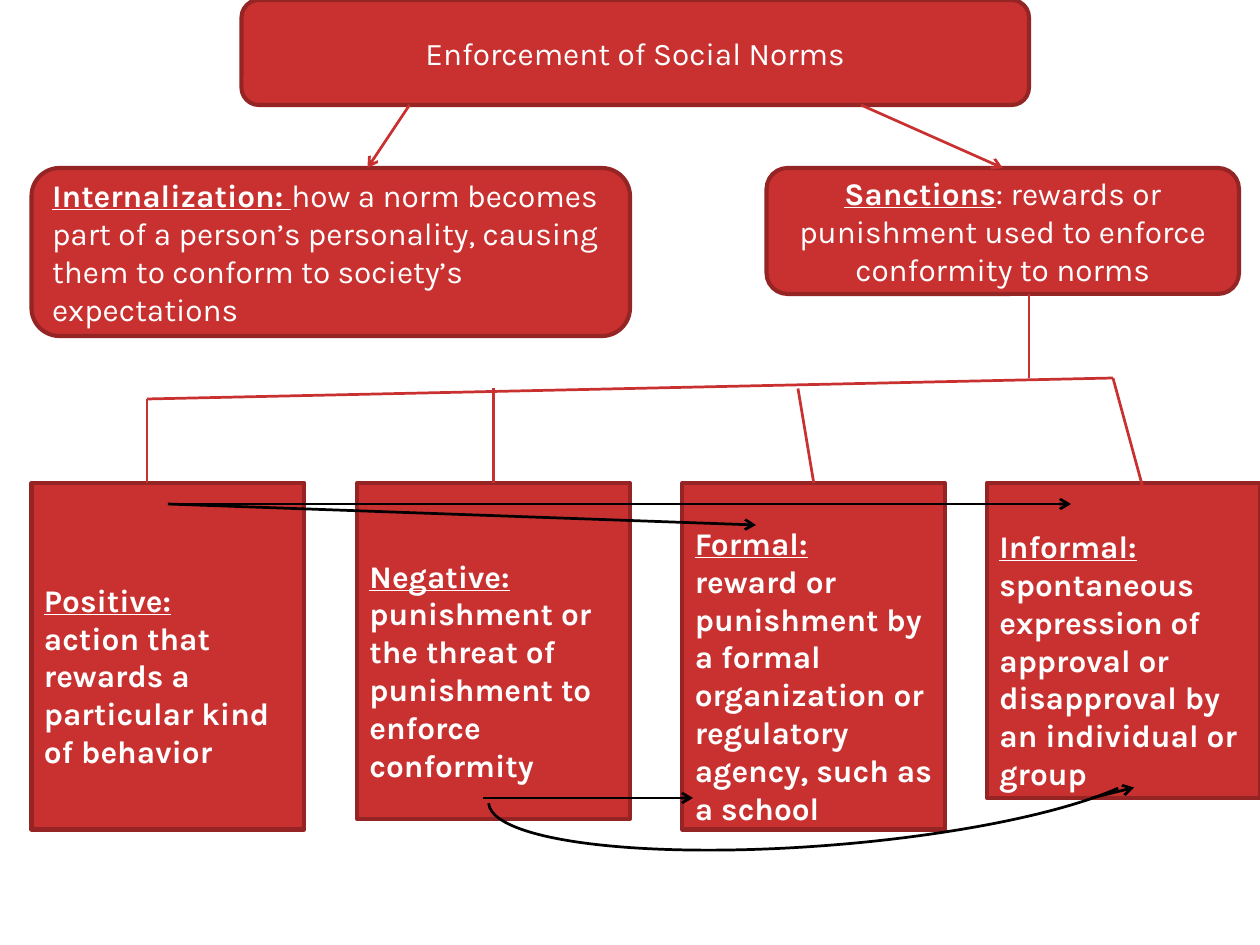
from lxml.etree import SubElement
from pptx import Presentation
from pptx.dml.color import RGBColor
from pptx.enum.shapes import MSO_CONNECTOR, MSO_SHAPE
from pptx.enum.text import MSO_ANCHOR, PP_ALIGN
from pptx.oxml.ns import qn
from pptx.util import Pt

RED = RGBColor(0xC9, 0x31, 0x31)
DARK_RED = RGBColor(0x95, 0x24, 0x24)
WHITE = RGBColor(0xFF, 0xFF, 0xFF)
BLACK = RGBColor(0x00, 0x00, 0x00)
LINE_WIDTH = Pt(1.57)
ROUNDED = MSO_SHAPE.ROUNDED_RECTANGLE

deck = Presentation()
deck.slide_width, deck.slide_height = Pt(720), Pt(540)
page = deck.slides.add_slide(deck.slide_layouts[6])


def add_box(kind, left, top, width, height, paragraphs, align=PP_ALIGN.LEFT):
    """Each paragraph is a list of (text, bold, underline) runs."""
    box = page.shapes.add_shape(kind, Pt(left), Pt(top), Pt(width), Pt(height))
    box.shadow.inherit = False
    box.fill.solid()
    box.fill.fore_color.rgb = RED
    box.line.color.rgb = DARK_RED
    box.line.width = Pt(2.36)
    frame = box.text_frame
    frame.word_wrap = True
    frame.vertical_anchor = MSO_ANCHOR.MIDDLE
    for index, runs in enumerate(paragraphs):
        para = frame.add_paragraph() if index else frame.paragraphs[0]
        para.alignment = align
        para.font.name = "Karla"
        para.font.size = Pt(18)
        para.font.color.rgb = WHITE
        for text, bold, underline in runs:
            span = para.add_run()
            span.text = text
            span.font.bold = bold
            span.font.underline = underline
    return box


def add_line(start, end, color, arrow):
    line = page.shapes.add_connector(
        MSO_CONNECTOR.STRAIGHT, *(Pt(value) for value in (*start, *end)))
    line.line.color.rgb = color
    line.line.width = LINE_WIDTH
    outline = line._element.spPr.find(qn("a:ln"))
    if arrow:
        SubElement(outline, qn("a:tailEnd"), type="arrow")
    SubElement(line._element.spPr, qn("a:effectLst"))


# Title and the two means of enforcement
add_box(ROUNDED, 138, 0, 450, 60,
        [[("Enforcement of Social Norms", False, False)]], PP_ALIGN.CENTER)
add_box(ROUNDED, 18, 96, 342, 96,
        [[("Internalization: ", True, True),
          ("how a norm becomes part of a person’s personality, causing them "
           "to conform to society’s expectations", False, False)]])
add_box(ROUNDED, 438, 96, 270, 72,
        [[("Sanctions", True, True),
          (": rewards or punishment used to enforce conformity to norms",
           False, False)]], PP_ALIGN.CENTER)
for start, end in [((234, 60), (210, 96)), ((492, 60), (573, 96))]:
    add_line(start, end, RED, arrow=True)

# Four kinds of sanction: left, width, height, term, meaning
SANCTIONS = [
    (18, 156, 198, "Positive:",
     "action that rewards a particular kind of behavior"),
    (204, 156, 192, "Negative:",
     "punishment or the threat of punishment to enforce conformity"),
    (390, 150, 198, "Formal:",
     "reward or punishment by a formal organization or regulatory agency, "
     "such as a school"),
    (564, 156, 180, "Informal:",
     "spontaneous expression of approval or disapproval by an individual "
     "or group"),
]
for left, width, height, term, meaning in SANCTIONS:
    box = add_box(MSO_SHAPE.RECTANGLE, left, 276, width, height,
                  [[(term, True, True)], [(meaning, True, False)]])
    box.text_frame.margin_top = Pt(25.2)

# Tree branches from Sanctions
BRANCHES = [
    ((588, 168), (588, 216)),
    ((84, 228), (636, 216)),
    ((84, 228), (84, 276)),
    ((282, 222), (282, 276)),
    ((456, 222), (465, 276)),
    ((636, 216), (654, 282)),
]
for start, end in BRANCHES:
    add_line(start, end, RED, arrow=False)

# Links from positive and negative to formal and informal
LINKS = [
    ((96, 288), (432, 300)),
    ((96, 288), (612, 288)),
    ((276, 456), (396, 456)),
]
for start, end in LINKS:
    add_line(start, end, BLACK, arrow=True)

curve = page.shapes.add_shape(
    MSO_SHAPE.ARC, Pt(278.6), Pt(404.6), Pt(385.2), Pt(78.5))
curve.rotation = 175.5
# Sweeps from about 187 degrees to 0: one unit here is 5/3 of a degree
curve.adjustments[0] = 112.03
curve.adjustments[1] = 0
curve.shadow.inherit = False
curve.fill.background()
curve.line.color.rgb = BLACK
curve.line.width = LINE_WIDTH
add_line((624, 456), (648, 450), BLACK, arrow=True)

deck.save("out.pptx")
